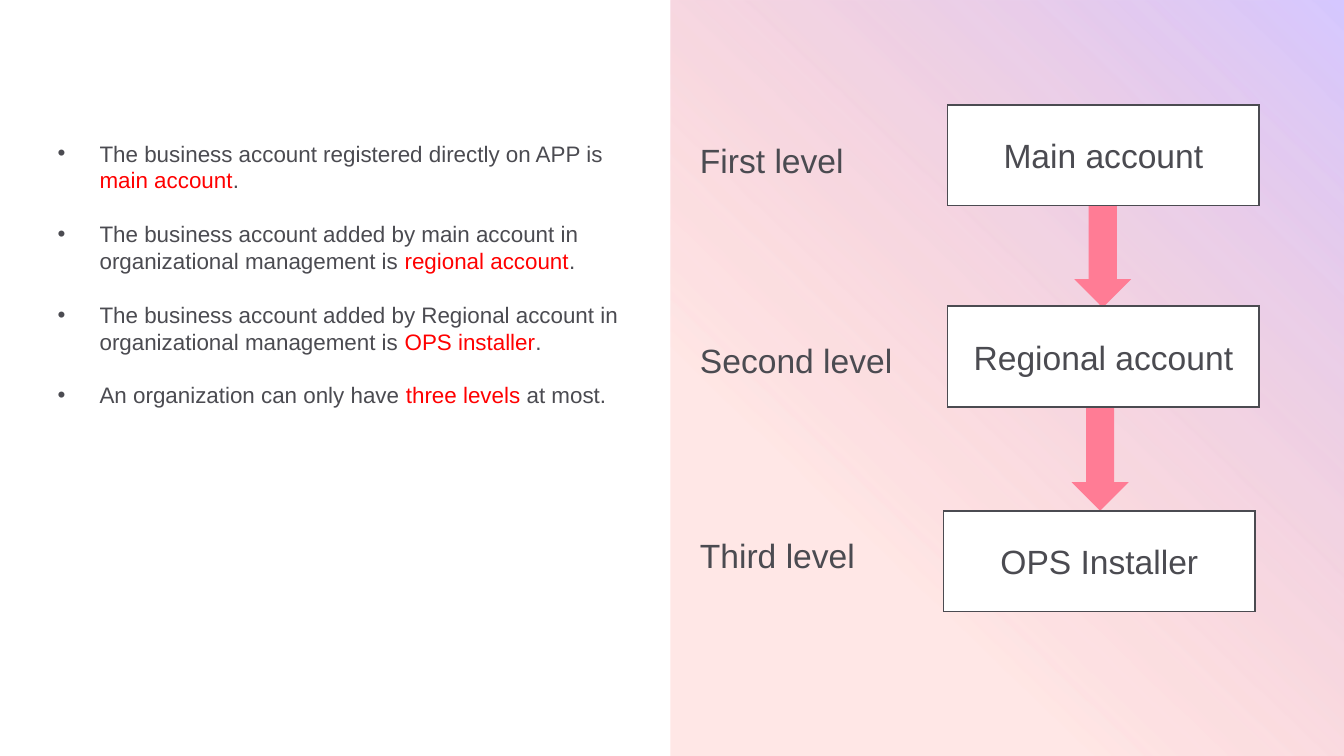
"""Build the slide on the three account levels of an organization."""
import typing

import lxml.etree
import pptx
import pptx.dml.color
import pptx.enum.shapes
import pptx.enum.text
import pptx.oxml.ns
import pptx.util

WIDTH = 10
HEIGHT = WIDTH * 9 / 16
COLS = 100
ROWS = COLS * 9 / 16
INK, RED, PINK, WHITE = "4B4B51", "FF0000", "FF7C95", "FFFFFF"
SHAPES = pptx.enum.shapes.MSO_SHAPE
ALIGN = pptx.enum.text.PP_ALIGN
ANCHOR = pptx.enum.text.MSO_ANCHOR


class Place(typing.NamedTuple):
    """Left, top, width and height in grid columns and rows."""
    left: float
    top: float
    width: float
    height: float


class Level(typing.NamedTuple):
    """One step of the chart, with its label on the left."""
    label: str
    label_top: float
    name: str
    left: float
    top: float


class Point(typing.NamedTuple):
    """One bullet with a marked phrase inside it."""
    start: str
    mark: str
    end: str


LEVELS = [
    Level("First level", 9.9, "Main account", 70.5, 7.8),
    Level("Second level", 24.8, "Regional account", 70.5, 22.8),
    Level("Third level", 39.3, "OPS Installer", 70.2, 38),
]
ARROWS = [Place(80.1, 15.3, 3.9, 7.5), Place(79.9, 30.4, 3.9, 7.5)]
POINTS = [
    Point("The business account registered directly on APP is ",
          "main account", "."),
    Point("The business account added by main account in "
          "organizational management is ", "regional account", "."),
    Point("The business account added by Regional account in "
          "organizational management is ", "OPS installer", "."),
    Point("An organization can only have ", "three levels ", "at most."),
]


def color(code: str) -> pptx.dml.color.RGBColor:
    """Turn a hex string into a colour."""
    return pptx.dml.color.RGBColor.from_string(code)


def spot(place: Place) -> list[int]:
    """Turn a grid place into lengths on the slide."""
    across, down = WIDTH / COLS, HEIGHT / ROWS
    scale = (across, down, across, down)
    return [pptx.util.Inches(part * unit) for part, unit in zip(place, scale)]


def add_tag(parent, name: str, **values: str) -> None:
    """Add a drawing element under a parent."""
    lxml.etree.SubElement(parent, pptx.oxml.ns.qn(name), **values)


def write(para, text: str, *, size: float = 18, ink: str = INK) -> None:
    """Add a run of text to a paragraph."""
    run = para.add_run()
    run.text = text
    run.font.name = "Arial"
    run.font.size = pptx.util.Pt(size)
    run.font.color.rgb = color(ink)


def add_box(slide, place: Place):
    """Add a text box that wraps and return its frame."""
    frame = slide.shapes.add_textbox(*spot(place)).text_frame
    frame.word_wrap = True
    return frame


def add_form(slide, kind, place: Place, fill: str = WHITE, line: str = INK):
    """Add a flat preset shape with a thin, sharp outline."""
    form = slide.shapes.add_shape(kind, *spot(place))
    form.shadow.inherit = False
    form.fill.solid()
    form.fill.fore_color.rgb = color(fill)
    form.line.color.rgb = color(line)
    form.line.width = pptx.util.Pt(1)
    add_tag(form.element.spPr.find(pptx.oxml.ns.qn("a:ln")),
            "a:miter", lim="800000")
    return form


def add_panel(slide) -> None:
    """Add the clear tinted panel on the right half."""
    panel = add_form(slide, SHAPES.RECTANGLE, Place(49.9, 0, 50.1, ROWS))
    panel.line.fill.background()
    panel.fill.gradient()
    panel.fill.gradient_angle = 46
    tints = [(0.29, "FF1008", 10), (0.99, "875EFF", 34)]
    for stop, (share, code, alpha) in zip(panel.fill.gradient_stops, tints):
        stop.position = share
        stop.color.rgb = color(code)
    tag = pptx.oxml.ns.qn("a:srgbClr")
    marks = panel.element.spPr.find(pptx.oxml.ns.qn("a:gradFill")).iter(tag)
    for mark, (share, code, alpha) in zip(marks, tints):
        add_tag(mark, "a:alpha", val=str(alpha * 1000))


def add_level(slide, level: Level) -> None:
    """Add a boxed account and the label of its level."""
    place = Place(level.left, level.top, 23.2, 7.5)
    frame = add_form(slide, SHAPES.RECTANGLE, place).text_frame
    frame.word_wrap = True
    frame.vertical_anchor = ANCHOR.MIDDLE
    frame.paragraphs[0].alignment = ALIGN.CENTER
    write(frame.paragraphs[0], level.name)
    label = add_box(slide, Place(51.1, level.label_top, 17.9, 4))
    write(label.paragraphs[0], level.label)


def add_points(slide) -> None:
    """Add the list of bullets on the left half."""
    frame = add_box(slide, Place(3.3, 9.9, 44.2, 24.2))
    indent = pptx.util.Pt(22.5)
    for rank, point in enumerate(POINTS):
        para = frame.add_paragraph() if rank else frame.paragraphs[0]
        props = para._p.get_or_add_pPr()
        props.set("marL", str(indent))
        props.set("indent", str(-indent))
        add_tag(props, "a:buFont", typeface="Arial")
        add_tag(props, "a:buChar", char="•")
        para.line_spacing = pptx.util.Pt(14.4)
        if rank:
            para.space_before = pptx.util.Pt(14.4)
        for text, ink in zip(point, (INK, RED, INK)):
            write(para, text, size=12, ink=ink)


def main() -> None:
    """Build and save the deck."""
    deck = pptx.Presentation()
    deck.slide_width = pptx.util.Inches(WIDTH)
    deck.slide_height = pptx.util.Inches(HEIGHT)
    slide = deck.slides.add_slide(deck.slide_layouts[6])
    add_panel(slide)
    for place in ARROWS:
        add_form(slide, SHAPES.DOWN_ARROW, place, PINK, PINK)
    for level in LEVELS:
        add_level(slide, level)
    add_points(slide)
    deck.save("out.pptx")


if __name__ == "__main__":
    main()
